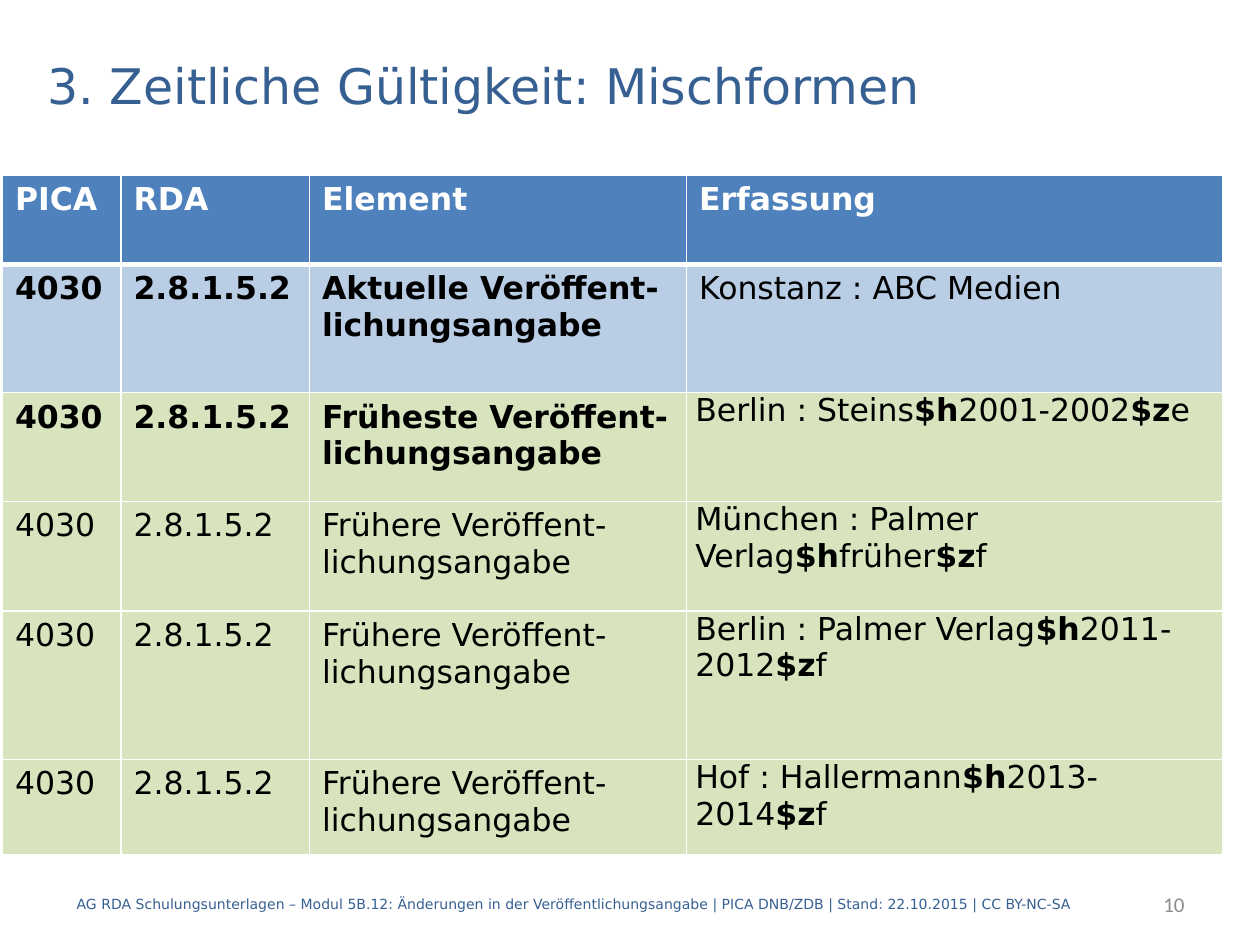
"""Build a slide with a table of publication statements and their validity."""
from dataclasses import dataclass

from lxml import etree
from pptx import Presentation
from pptx.dml.color import RGBColor
from pptx.enum.text import MSO_ANCHOR, PP_ALIGN
from pptx.oxml.ns import qn
from pptx.util import Pt

MIDDLE = MSO_ANCHOR.MIDDLE
LEFT, RIGHT = PP_ALIGN.LEFT, PP_ALIGN.RIGHT
COLOURS = {
    "heading": "376092",
    "number": "8C8C8C",
    "header": "4F81BD",
    "current": "B9CDE5",
    "earlier": "D7E4BD",
    "white": "FFFFFF",
    "black": "000000",
}
SANS = "DejaVu Sans"
BOLD_MARK = "|"
LINE_BREAK = "\v"
COLUMN_WIDTHS = (67.8, 107.7, 215.5, 306.3)
FIELD, RULE = "4030", "2.8.1.5.2"
EARLIER = "Frühere Veröffent-\nlichungsangabe"


@dataclass
class Label:
    text: str
    left: float
    top: float
    width: float
    height: float
    size: float
    colour: str
    font: str = SANS
    align: PP_ALIGN = LEFT


@dataclass
class Row:
    height: float
    fill: str
    texts: tuple[str, ...]
    bold_columns: int = 0
    colour: str = "black"
    bottom_line: float = 1
    tight_last: bool = True


LABELS = (
    Label("3. Zeitliche Gültigkeit: Mischformen", 20.2, 14.4, 680, 68.4, 28, "heading"),
    Label("AG RDA Schulungsunterlagen – Modul 5B.12: Änderungen in der "
          "Veröffentlichungsangabe | PICA DNB/ZDB | Stand: 22.10.2015 | CC BY-NC-SA",
          36.7, 502, 601, 28.8, 8, "heading"),
    Label("10", 569.5, 502, 114.5, 28.8, 12, "number", "Calibri", RIGHT),
)
ROWS = (
    Row(50.8, "header", ("PICA", "RDA", "Element", "Erfassung"), 4, "white", 3, False),
    Row(73.3, "current", (FIELD, RULE, "Aktuelle Veröffent-\vlichungsangabe",
                          "Konstanz : ABC Medien"), 3, tight_last=False),
    Row(62.2, "earlier", (FIELD, RULE, "Früheste Veröffent-\vlichungsangabe",
                          "Berlin : Steins|$h|2001-2002|$z|e"), 3),
    Row(62.7, "earlier", (FIELD, RULE, EARLIER, "München : Palmer Verlag|$h|früher|$z|f")),
    Row(84.8, "earlier", (FIELD, RULE, EARLIER, "Berlin : Palmer Verlag|$h|2011-2012|$z|f")),
    Row(54.3, "earlier", (FIELD, RULE, EARLIER.replace("\n", ""),
                          "Hof : Hallermann|$h|2013-2014|$z|f")),
)


def apply_format(target, values: dict) -> None:
    """Set every named attribute on the target."""
    for name, value in values.items():
        setattr(target, name, value)


def write_text(frame, text: str, size: float, colour: str, font: str = SANS,
               bold: bool = False, align: PP_ALIGN = LEFT) -> None:
    """Write paragraphs whose marked pieces are switched to bold."""
    for index, line in enumerate(text.split("\n")):
        paragraph = frame.add_paragraph() if index else frame.paragraphs[0]
        paragraph.alignment = align
        for part_index, part in enumerate(line.split(LINE_BREAK)):
            if part_index:
                paragraph.add_line_break()
            pieces = part.split(BOLD_MARK) if frame.word_wrap is None else [part]
            for piece_index, piece in enumerate(pieces):
                run = paragraph.add_run()
                run.text = piece
                apply_format(run.font, {"size": Pt(size), "name": font,
                                        "bold": bold or piece_index % 2 == 1})
                run.font.color.rgb = RGBColor.from_string(COLOURS[colour])


def draw_label(slide, label: Label) -> None:
    """Draw one vertically centred text box."""
    shape = slide.shapes.add_textbox(Pt(label.left), Pt(label.top),
                                     Pt(label.width), Pt(label.height))
    apply_format(shape.text_frame, {"word_wrap": True, "vertical_anchor": MIDDLE})
    write_text(shape.text_frame, label.text, label.size, label.colour,
               label.font, align=label.align)


def draw_borders(cell, top: float, bottom: float) -> None:
    """Put white lines around a cell, ahead of its fill."""
    properties = cell._tc.get_or_add_tcPr()
    widths = {"a:lnL": 1, "a:lnR": 1, "a:lnT": top, "a:lnB": bottom}
    for position, (tag, width) in enumerate(widths.items()):
        line = etree.Element(qn(tag), w=str(Pt(width)))
        fill = etree.SubElement(line, qn("a:solidFill"))
        etree.SubElement(fill, qn("a:srgbClr"), val=COLOURS["white"])
        properties.insert(position, line)


def draw_table(slide, rows: tuple[Row, ...], left: float, top: float) -> None:
    """Draw the table of statements."""
    table = slide.shapes.add_table(
        len(rows), len(COLUMN_WIDTHS), Pt(left), Pt(top),
        Pt(sum(COLUMN_WIDTHS)), Pt(sum(row.height for row in rows))).table
    for column, width in zip(table.columns, COLUMN_WIDTHS):
        column.width = Pt(width)
    line_above = 1
    for row_index, row in enumerate(rows):
        table.rows[row_index].height = Pt(row.height)
        for column_index, text in enumerate(row.texts):
            cell = table.cell(row_index, column_index)
            cell.fill.solid()
            cell.fill.fore_color.rgb = RGBColor.from_string(COLOURS[row.fill])
            if row.tight_last and column_index == len(row.texts) - 1:
                apply_format(cell, {"margin_left": Pt(5), "margin_right": Pt(5),
                                    "margin_top": 0, "margin_bottom": 0})
            write_text(cell.text_frame, text, 18, row.colour,
                       bold=column_index < row.bold_columns)
            draw_borders(cell, line_above, row.bottom_line)
        line_above = row.bottom_line


def main() -> None:
    """Create and save the presentation."""
    presentation = Presentation()
    apply_format(presentation, {"slide_width": Pt(720), "slide_height": Pt(540)})
    slide = presentation.slides.add_slide(presentation.slide_layouts[6])
    for label in LABELS:
        draw_label(slide, label)
    draw_table(slide, ROWS, 1.4, 100.3)
    presentation.save("out.pptx")


if __name__ == "__main__":
    main()
